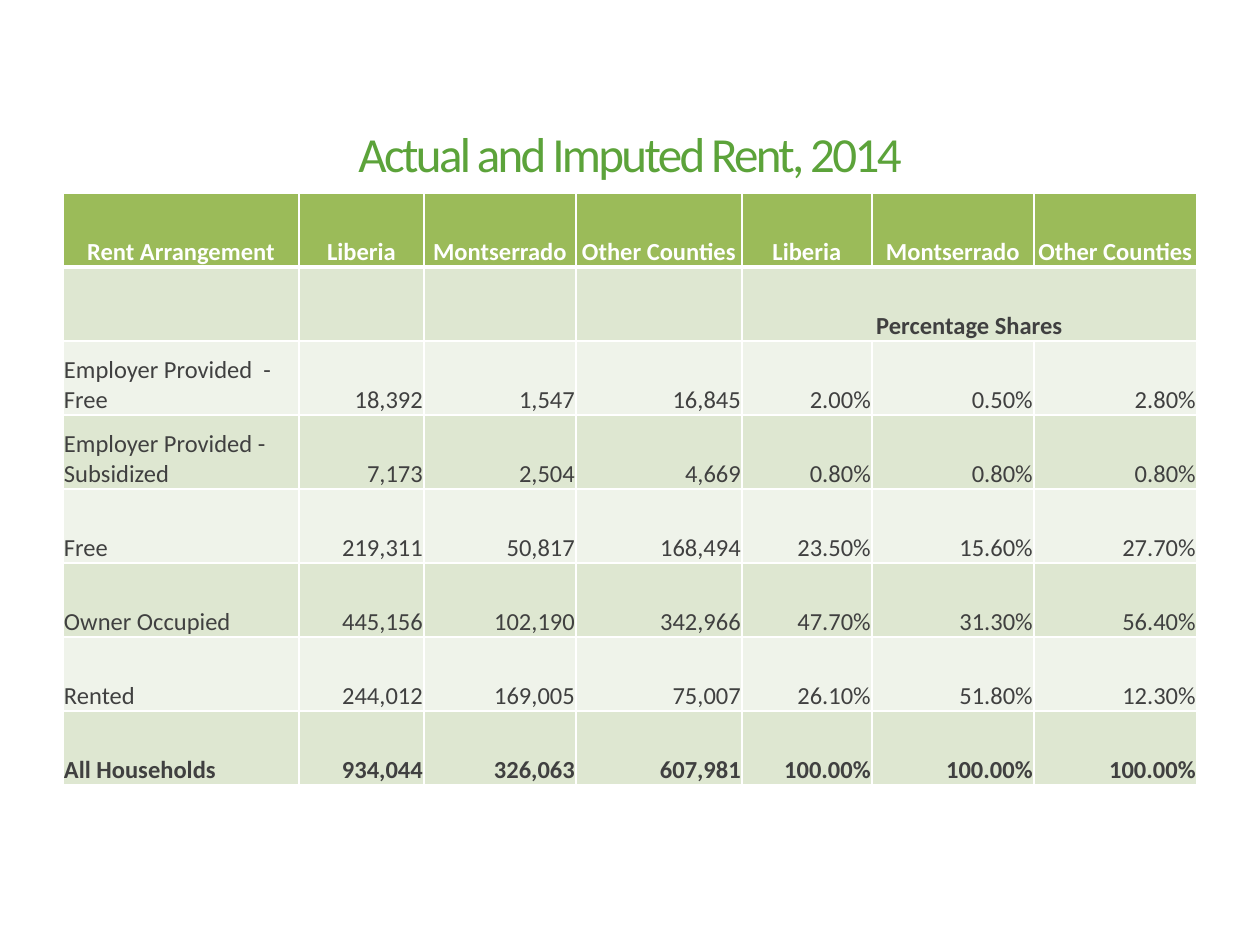
from lxml import etree
from pptx import Presentation, util as u
from pptx.dml.color import RGBColor
from pptx.enum import text
from pptx.oxml import ns

PX = 914400 // 126
FONT = "Calibri"
WHITE = RGBColor(0xFF, 0xFF, 0xFF)
TITLE = RGBColor(0x5C, 0xA3, 0x3A)
INK = RGBColor(0x40, 0x40, 0x40)
HEAD = RGBColor(0x9B, 0xBB, 0x59)
DARK = RGBColor(0xDE, 0xE7, 0xD1)
LIGHT = RGBColor(0xEF, 0xF3, 0xEA)
LEFT, MID, RIGHT = (text.PP_ALIGN.LEFT, text.PP_ALIGN.CENTER,
                    text.PP_ALIGN.RIGHT)

COLS = [236, 125, 152, 166, 130, 162, 163]
ROW = 74
PLACES = ["Liberia", "Montserrado", "Other Counties"]
ROWS = [
    ["Rent Arrangement"] + PLACES * 2,
    ["", "", "", "", "Percentage Shares", "", ""],
    ["Employer Provided  - Free", "18,392", "1,547", "16,845",
     "2.00%", "0.50%", "2.80%"],
    ["Employer Provided - Subsidized", "7,173", "2,504", "4,669",
     "0.80%", "0.80%", "0.80%"],
    ["Free", "219,311", "50,817", "168,494", "23.50%", "15.60%", "27.70%"],
    ["Owner Occupied", "445,156", "102,190", "342,966",
     "47.70%", "31.30%", "56.40%"],
    ["Rented", "244,012", "169,005", "75,007", "26.10%", "51.80%", "12.30%"],
    ["All Households", "934,044", "326,063", "607,981",
     "100.00%", "100.00%", "100.00%"],
]


def px(n):
    return u.Emu(n * PX)


def write(frame, words, size=14, color=INK, bold=False, align=LEFT,
          lead=None, track=None):
    para = frame.paragraphs[0]
    para.alignment = align
    if lead:
        para.line_spacing = u.Pt(lead)
    run = para.add_run()
    run.text = words
    font = run.font
    font.name, font.size, font.bold = FONT, u.Pt(size), bold
    font.color.rgb = color
    if track is not None:
        run._r.get_or_add_rPr().set("spc", str(round(track * 100)))


def edge(cell, side, width):
    line = etree.SubElement(cell._tc.get_or_add_tcPr(), ns.qn("a:ln" + side),
                            w=str(u.Pt(width)))
    fill = etree.SubElement(line, ns.qn("a:solidFill"))
    etree.SubElement(fill, ns.qn("a:srgbClr"), val=str(WHITE))


def add_title(slide):
    title = slide.shapes.title
    title.left, title.top = px(63), px(79)
    title.width, title.height = px(1134), px(158)
    frame = title.text_frame
    frame.word_wrap = True
    frame.auto_size = text.MSO_AUTO_SIZE.NONE
    frame.vertical_anchor = text.MSO_ANCHOR.MIDDLE
    frame.margin_left = frame.margin_right = 0
    frame.margin_top = frame.margin_bottom = 0
    write(frame, "Actual and Imputed Rent, 2014", size=28, color=TITLE,
          align=MID, lead=28, track=-1.5)


def fill_cell(cell, words, r, c):
    cell.vertical_anchor = text.MSO_ANCHOR.BOTTOM
    cell.margin_left = cell.margin_right = cell.margin_top = px(1)
    cell.margin_bottom = 0
    # Borders: a thick rule parts the header from the body
    for side in "LRTB":
        thick = (r, side) in ((0, "B"), (1, "T"))
        edge(cell, side, 3 if thick else 1)
    cell.fill.solid()
    cell.fill.fore_color.rgb = HEAD if r == 0 else DARK if r % 2 else LIGHT
    if words:
        align = MID if r < 2 else RIGHT if c else LEFT
        write(cell.text_frame, words, color=INK if r else WHITE,
              bold=r in (0, 1, len(ROWS) - 1), align=align)


def add_rents(slide):
    table = slide.shapes.add_table(
        len(ROWS), len(COLS), px(63), px(193),
        px(sum(COLS)), px(ROW * len(ROWS))).table
    for col, width in zip(table.columns, COLS):
        col.width = px(width)
    for row in table.rows:
        row.height = px(ROW)
    for r, row in enumerate(ROWS):
        for c, words in enumerate(row):
            fill_cell(table.cell(r, c), words, r, c)
    # One heading over the three share columns
    table.cell(1, 4).merge(table.cell(1, 6))


def main():
    deck = Presentation()
    deck.slide_width, deck.slide_height = u.Inches(10), u.Inches(7.5)
    slide = deck.slides.add_slide(deck.slide_layouts[5])
    add_title(slide)
    add_rents(slide)
    deck.save("out.pptx")


if __name__ == "__main__":
    main()
